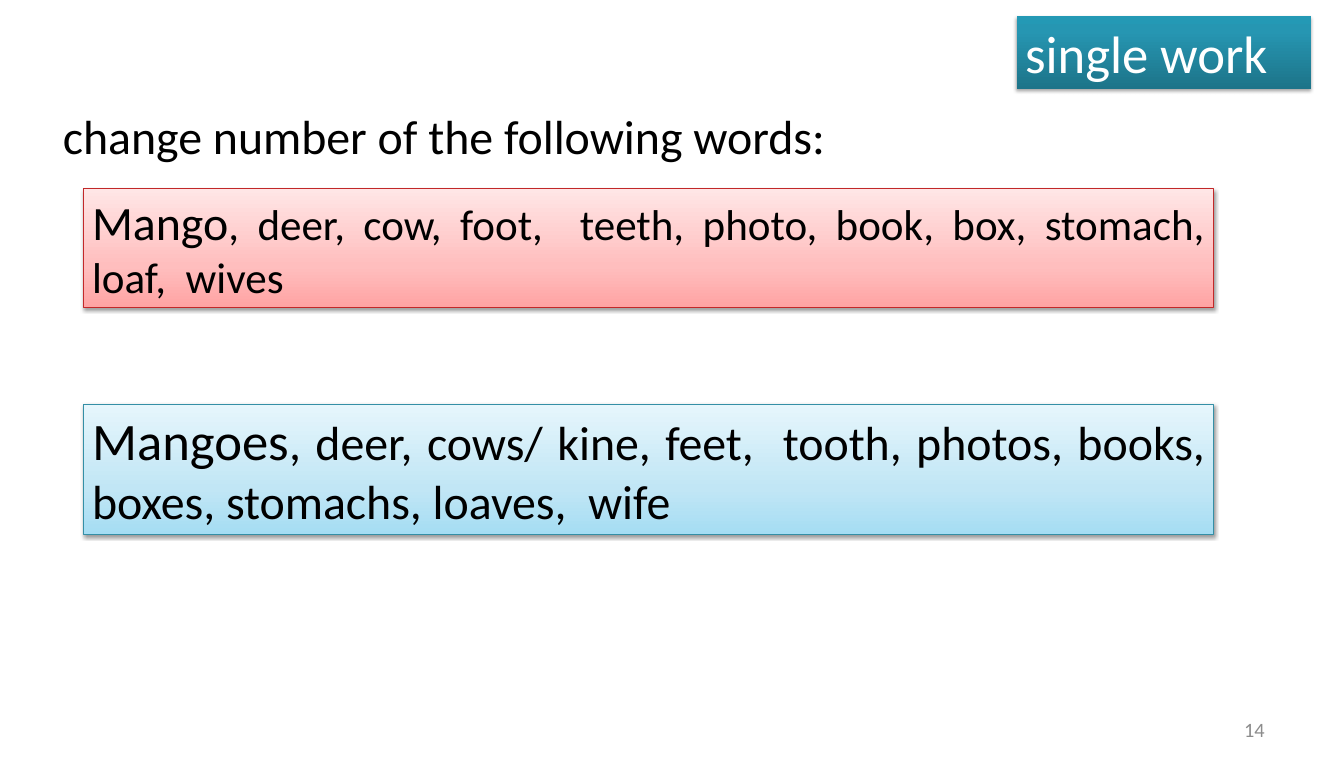
import copy

import pptx
import pptx.dml.color
import pptx.enum.shapes
import pptx.enum.text
import pptx.oxml
import pptx.oxml.ns
import pptx.util

RGBColor = pptx.dml.color.RGBColor
ALIGN = pptx.enum.text.PP_ALIGN
ANCHOR = pptx.enum.text.MSO_ANCHOR
FIT = pptx.enum.text.MSO_AUTO_SIZE

EMU_PER_PX = 9144
BLACK = RGBColor(0x00, 0x00, 0x00)
WHITE = RGBColor(0xFF, 0xFF, 0xFF)
GREY = RGBColor(0x8C, 0x8C, 0x8C)
RED_LINE = RGBColor(0xC2, 0x28, 0x29)
BLUE_LINE = RGBColor(0x34, 0x8F, 0xA6)
TEAL_STOPS = [
    (0, RGBColor(0x1D, 0x74, 0x89)),
    (0.8, RGBColor(0x26, 0x96, 0xB2)),
    (1, RGBColor(0x24, 0x99, 0xB5)),
]
RED_STOPS = [
    (0, RGBColor(0xFF, 0xA3, 0xA3)),
    (0.35, RGBColor(0xFF, 0xBE, 0xBE)),
    (1, RGBColor(0xFF, 0xE6, 0xE6)),
]
BLUE_STOPS = [
    (0, RGBColor(0xA5, 0xDD, 0xF3)),
    (0.35, RGBColor(0xC1, 0xE6, 0xF5)),
    (1, RGBColor(0xE6, 0xF6, 0xFC)),
]


def px(length):
    """Turn pixels into EMU."""
    return pptx.util.Emu(length * EMU_PER_PX)


def apply_format(target, values):
    """Set every attribute named in values on target."""
    for name, value in values.items():
        setattr(target, name, value)


def place(element, box):
    """Move and size an element to a box given in px."""
    apply_format(element, dict(zip(("left", "top", "width", "height"), map(px, box))))


def write(element, runs, color, align, **frame_format):
    """Fill an element with one paragraph of (text, size) runs."""
    frame = element.text_frame
    apply_format(frame, {
        "word_wrap": True,
        "auto_size": FIT.SHAPE_TO_FIT_TEXT,
        "vertical_anchor": ANCHOR.TOP,
        **frame_format,
    })
    paragraph = frame.paragraphs[0]
    paragraph.alignment = align
    for text, size in runs:
        run = paragraph.add_run()
        run.text = text
        apply_format(run.font, {"name": "Calibri", "size": pptx.util.Pt(size)})
        run.font.color.rgb = color


def fill_gradient(shape, stops):
    """Fill a shape with three colour stops from bottom to top."""
    shape.fill.gradient()
    shape.fill.gradient_angle = 90
    stop_list = shape._element.spPr.find(".//" + pptx.oxml.ns.qn("a:gsLst"))
    stop_list.append(copy.deepcopy(stop_list[-1]))
    for stop, (position, color) in zip(shape.fill.gradient_stops, stops):
        stop.position = position
        stop.color.rgb = color


def add_shadow(shape, distance, opacity):
    """Give a shape a soft shadow below it."""
    shape.shadow.inherit = False
    effects = shape._element.spPr.find(pptx.oxml.ns.qn("a:effectLst"))
    effects.append(pptx.oxml.parse_xml(
        f'<a:outerShdw {pptx.oxml.ns.nsdecls("a")} blurRad="{pptx.util.Pt(3.1)}" '
        f'dist="{pptx.util.Pt(distance)}" dir="5400000" rotWithShape="0">'
        f'<a:srgbClr val="000000"><a:alpha val="{opacity * 1000}"/></a:srgbClr>'
        '</a:outerShdw>'
    ))


def add_panel(slide, box, stops, line, shadow, runs, color, align):
    """Add a shaded rectangle with text."""
    panel = slide.shapes.add_shape(
        pptx.enum.shapes.MSO_SHAPE.RECTANGLE, *map(px, box))
    fill_gradient(panel, stops)
    if line is None:
        panel.line.fill.background()
    else:
        panel.line.color.rgb = line
        panel.line.width = pptx.util.Pt(0.75)
    add_shadow(panel, *shadow)
    write(panel, runs, color, align)


def add_page_number(slide, number):
    """Add the page number at the lower right."""
    page_number = slide.shapes.add_textbox(*map(px, (1118, 823, 364, 47)))
    write(page_number, [(number, 17)], GREY, ALIGN.RIGHT,
          auto_size=FIT.NONE, vertical_anchor=ANCHOR.MIDDLE,
          margin_left=px(14), margin_right=px(14),
          margin_top=px(7), margin_bottom=px(7))


def main():
    """Build the word number exercise."""
    deck = pptx.Presentation()
    apply_format(deck, {"slide_width": px(1560), "slide_height": px(888)})
    slide = deck.slides.add_slide(deck.slide_layouts[5])

    heading = slide.shapes.title
    place(heading, (63, 119, 1117, 77))
    write(heading, [("change number of the following words:", 40)],
          BLACK, ALIGN.JUSTIFY)

    add_page_number(slide, "14")
    add_panel(slide, (1180, 19, 342, 84), TEAL_STOPS, None, (1.8, 35),
              [("single work", 44)], WHITE, ALIGN.LEFT)

    questions = [
        ("Mango", 40),
        (", deer, cow, foot,  teeth, photo, book, box, stomach, loaf,  wives", 36),
    ]
    answers = [
        ("Mangoes", 44),
        (", deer, cows/ kine, feet,  tooth, photos, books, boxes, stomachs, "
         "loaves,  wife", 40),
    ]
    for top, height, stops, line, words in (
        (219, 138, RED_STOPS, RED_LINE, questions),
        (469, 151, BLUE_STOPS, BLUE_LINE, answers),
    ):
        add_panel(slide, (97, top, 1312, height), stops, line, (1.6, 38),
                  words, BLACK, ALIGN.JUSTIFY)

    deck.save("out.pptx")


if __name__ == "__main__":
    main()
